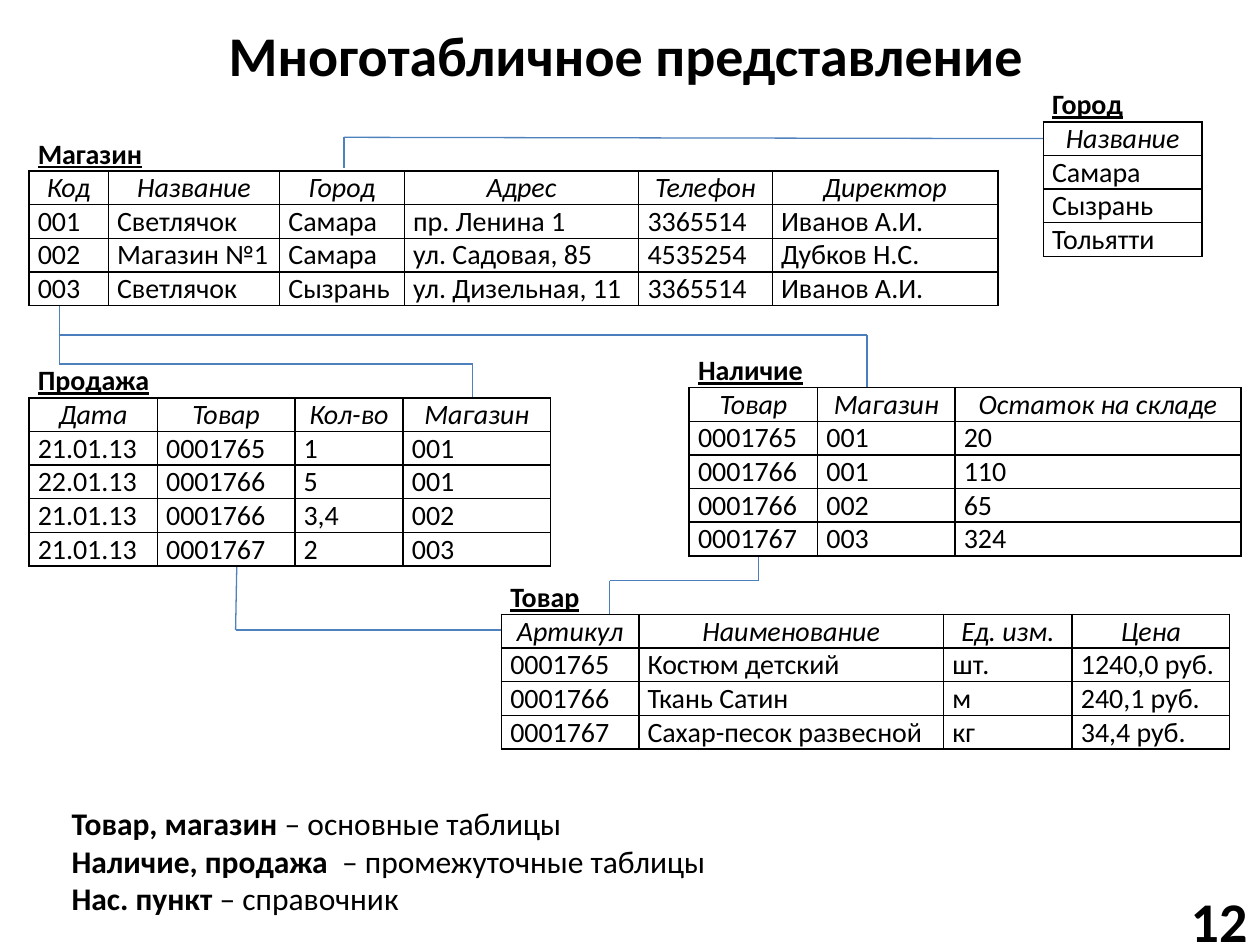
from lxml.etree import SubElement
from pptx import Presentation
from pptx.dml.color import RGBColor
from pptx.enum.shapes import MSO_CONNECTOR
from pptx.enum.text import MSO_ANCHOR, PP_ALIGN
from pptx.oxml import parse_xml
from pptx.oxml.ns import nsdecls, qn
from pptx.util import Inches, Pt

BLACK = RGBColor(0x00, 0x00, 0x00)
WHITE = RGBColor(0xFF, 0xFF, 0xFF)
BLUE = RGBColor(0x4F, 0x81, 0xBD)
STEEL = RGBColor(0x4B, 0x7E, 0xBC)
FONT = "Calibri"
ROW = 0.267

LINKS = [
    (BLUE, [(0.47, 2.42), (0.47, 2.89), (3.75, 2.89), (3.75, 3.2)]),
    (BLUE, [(1.88, 4.45), (1.87, 5), (3.98, 5)]),
    (BLUE, [(2.73, 1.33), (2.73, 1.09), (8.28, 1.1)]),
    (STEEL, [(4.84, 4.92), (4.84, 4.61), (6.02, 4.61), (6.02, 4.38)]),
    (STEEL, [(6.88, 3.12), (6.88, 2.66), (0.47, 2.66)]),
]

GOODS = [
    ["Артикул", "Наименование", "Ед. изм.", "Цена"],
    ["0001765", "Костюм детский", "шт.", "1240,0 руб."],
    ["0001766", "Ткань Сатин", "м", "240,1 руб."],
    ["0001767", "Сахар-песок развесной", "кг", "34,4 руб."],
]
SALES = [
    ["Дата", "Товар", "Кол-во", "Магазин"],
    ["21.01.13", "0001765", "1", "001"],
    ["22.01.13", "0001766", "5", "001"],
    ["21.01.13", "0001766", "3,4", "002"],
    ["21.01.13", "0001767", "2", "003"],
]
STOCK = [
    ["Товар", "Магазин", "Остаток на складе"],
    ["0001765", "001", "20"],
    ["0001766", "001", "110"],
    ["0001766", "002", "65"],
    ["0001767", "003", "324"],
]
SHOPS = [
    ["Код", "Название", "Город", "Адрес", "Телефон", "Директор"],
    ["001", "Светлячок", "Самара", "пр. Ленина 1", "3365514", "Иванов А.И."],
    ["002", "Магазин №1", "Самара", "ул. Садовая, 85", "4535254", "Дубков Н.С."],
    ["003", "Светлячок", "Сызрань", "ул. Дизельная, 11", "3365514", "Иванов А.И."],
]
TOWNS = [["Название"], ["Самара"], ["Сызрань"], ["Тольятти"]]

TABLES = [
    ("Товар", 3.98, 4.61, [1.09, 2.42, 1.02, 1.25], GOODS, PP_ALIGN.JUSTIFY),
    ("Продажа", 0.23, 2.89, [1.02, 1.09, 0.86, 1.17], SALES, PP_ALIGN.JUSTIFY),
    ("Наличие", 5.47, 2.81, [1.02, 1.09, 2.27], STOCK, PP_ALIGN.JUSTIFY),
    ("Магазин", 0.23, 1.09, [0.63, 1.36, 0.99, 1.86, 1.06, 1.79], SHOPS, PP_ALIGN.LEFT),
    ("Город", 8.28, 0.7, [1.26], TOWNS, PP_ALIGN.JUSTIFY),
]

NOTES = [
    [("Товар, магазин ", True), ("– основные таблицы", False)],
    [("Наличие, продажа  ", True), ("– промежуточные таблицы", False)],
    [("Нас. пункт ", True), ("– справочник", False)],
]


def add_run(para, text, size, bold=False, italic=False, under=False):
    """Append one styled run to a paragraph."""
    run = para.add_run()
    run.text = text
    font = run.font
    font.name, font.size = FONT, Pt(size)
    font.bold, font.italic, font.underline = bold, italic, under
    font.color.rgb = BLACK


def add_text(slide, box, lines, size, align, anchor):
    """Place lines of (text, bold) runs in the given box."""
    frame = slide.shapes.add_textbox(*map(Inches, box)).text_frame
    frame.word_wrap = True
    frame.vertical_anchor = anchor
    for i, line in enumerate(lines):
        para = frame.add_paragraph() if i else frame.paragraphs[0]
        para.alignment = align
        for text, bold in line:
            add_run(para, text, size, bold)


def add_link(slide, color, points):
    """Draw straight connectors along the points."""
    for start, end in zip(points, points[1:]):
        line = slide.shapes.add_connector(
            MSO_CONNECTOR.STRAIGHT, *map(Inches, start + end))
        line.line.color.rgb = color
        line.line.width = Pt(0.75)
        SubElement(line._element.spPr, qn("a:effectLst"))


def set_edges(cell, shown):
    """Give the cell black borders on the shown sides only."""
    props = cell._tc.get_or_add_tcPr()
    for i, side in enumerate("LRTB"):
        fill = (f'<a:solidFill><a:srgbClr val="{BLACK}"/></a:solidFill>'
                if side in shown else "<a:noFill/>")
        props.insert(i, parse_xml(
            f'<a:ln{side} {nsdecls("a")} w="{Pt(1)}">{fill}</a:ln{side}>'))


def add_grid(slide, name, left, top, widths, rows, align):
    """Build a table with an underlined name above its bordered cells."""
    count = len(rows) + 1
    table = slide.shapes.add_table(
        count, len(widths), Inches(left), Inches(top),
        Inches(sum(widths)), Inches(ROW * count)).table
    table.first_row = table.horz_banding = False
    for col, width in zip(table.columns, widths):
        col.width = Inches(width)
    if len(widths) > 1:
        table.cell(0, 0).merge(table.cell(0, len(widths) - 1))
    for r, row in enumerate([[name] + [""] * (len(widths) - 1)] + rows):
        table.rows[r].height = Inches(ROW)
        for c, text in enumerate(row):
            cell = table.cell(r, c)
            cell.margin_left = cell.margin_right = Inches(0.07)
            cell.margin_top = cell.margin_bottom = 0
            if r:
                cell.fill.solid()
                cell.fill.fore_color.rgb = WHITE
            else:
                cell.fill.background()
            set_edges(cell, "LRTB" if r else "B")
            para = cell.text_frame.paragraphs[0]
            para.alignment = PP_ALIGN.CENTER if r == 1 else align
            if text:
                add_run(para, text, 16, bold=r == 0, italic=r == 1, under=r == 0)


def main():
    """Build and save the slide."""
    deck = Presentation()
    deck.slide_width, deck.slide_height = Inches(10), Inches(7.5)
    slide = deck.slides.add_slide(deck.slide_layouts[6])
    add_text(slide, (0.47, 0, 9, 0.86), [[("Многотабличное представление", True)]],
             32, PP_ALIGN.CENTER, MSO_ANCHOR.MIDDLE)
    add_text(slide, (7.67, 7.1, 2.33, 0.4), [[("12", True)]],
             32, PP_ALIGN.RIGHT, MSO_ANCHOR.MIDDLE)
    for link in LINKS:
        add_link(slide, *link)
    add_text(slide, (0.47, 6.33, 9.06, 1.01), NOTES,
             18, PP_ALIGN.LEFT, MSO_ANCHOR.TOP)
    for grid in TABLES:
        add_grid(slide, *grid)
    deck.save("out.pptx")


if __name__ == "__main__":
    main()
